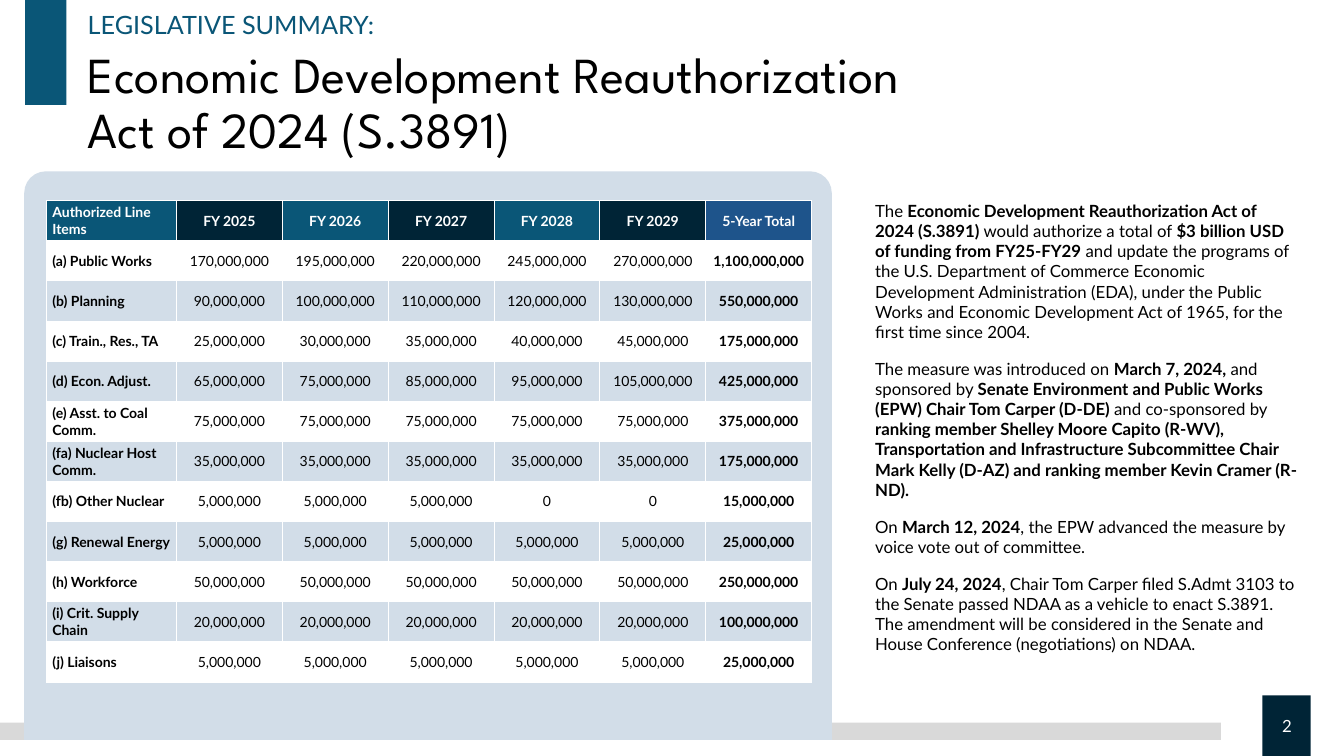
from lxml import etree
from pptx import Presentation
from pptx import util as u
from pptx.dml.color import RGBColor
from pptx.enum import shapes, text
from pptx.oxml import ns

NAVY = RGBColor(0x00, 0x24, 0x36)
TEAL = RGBColor(0x0A, 0x56, 0x77)
BLUE = RGBColor(0x1E, 0x54, 0x8B)
PALE = RGBColor(0xD2, 0xDD, 0xE8)
GRAY = RGBColor(0xD9, 0xD9, 0xD9)
WHITE = RGBColor(0xFF, 0xFF, 0xFF)
BLACK = RGBColor(0x00, 0x00, 0x00)

YEARS = [f"FY {year}" for year in range(2025, 2030)]
MILLIONS = [
    ("(a) Public Works", [170, 195, 220, 245, 270]),
    ("(b) Planning", [90, 100, 110, 120, 130]),
    ("(c) Train., Res., TA", [25, 30, 35, 40, 45]),
    ("(d) Econ. Adjust.", [65, 75, 85, 95, 105]),
    ("(e) Asst. to Coal Comm.", [75] * 5),
    ("(fa) Nuclear Host Comm.", [35] * 5),
    ("(fb) Other Nuclear", [5, 5, 5, 0, 0]),
    ("(g) Renewal Energy", [5] * 5),
    ("(h) Workforce", [50] * 5),
    ("(i) Crit. Supply Chain", [20] * 5),
    ("(j) Liaisons", [5] * 5),
]
STORY = [
    "The *Economic Development Reauthorization Act of 2024 (S.3891)* would authorize "
    "a total of *$3 billion USD of funding from FY25-FY29 *and update the programs of "
    "the U.S. Department of Commerce Economic Development Administration (EDA), under "
    "the Public Works and Economic Development Act of 1965, for the first time since 2004.",
    "The measure was introduced on *March 7, 2024, *and sponsored by *Senate Environment "
    "and Public Works (EPW) Chair Tom Carper (D-DE) *and co-sponsored by *ranking member "
    "Shelley Moore Capito (R-WV), Transportation and Infrastructure Subcommittee Chair "
    "Mark Kelly (D-AZ) and ranking member Kevin Cramer (R-ND).",
    "On *March 12, 2024*, the EPW advanced the measure by voice vote out of committee.",
    "On *July 24, 2024*, Chair Tom Carper filed S.Admt 3103 to the Senate passed NDAA as "
    "a vehicle to enact S.3891. The amendment will be considered in the Senate and House "
    "Conference (negotiations) on NDAA.",
]


class Deck:
    face = "Lato"
    head = "League Spartan"

    def __init__(self):
        self.prs = Presentation()
        self.prs.slide_width = u.Inches(13.33)
        self.prs.slide_height = u.Inches(7.5)
        self.slide = self.prs.slides.add_slide(self.prs.slide_layouts[5])

    def ink(self, run, size, color, bold=False, face=None):
        run.font.name = face or self.face
        run.font.size = u.Pt(size)
        run.font.color.rgb = color
        run.font.bold = bold

    def frame(self, box, wrap=True):
        frame = box.text_frame
        frame.margin_left = frame.margin_right = 0
        frame.margin_top = frame.margin_bottom = 0
        frame.word_wrap = wrap
        frame.vertical_anchor = text.MSO_ANCHOR.TOP
        return frame

    def block(self, place, color, kind=shapes.MSO_SHAPE.RECTANGLE):
        shape = self.slide.shapes.add_shape(kind, *map(u.Inches, place))
        shape.shadow.inherit = False
        shape.fill.solid()
        shape.fill.fore_color.rgb = color
        shape.line.fill.background()
        return shape

    def title(self, place, words):
        box = self.slide.shapes.title
        box.left, box.top, box.width, box.height = map(u.Inches, place)
        frame = self.frame(box)
        frame.text = words
        para = frame.paragraphs[0]
        para.alignment = text.PP_ALIGN.LEFT
        para.line_spacing = 0.9
        for run in para.runs:
            self.ink(run, 36, BLACK, face=self.head)

    def label(self, place, words, size, color, wrap=True):
        box = self.slide.shapes.add_textbox(*map(u.Inches, place))
        frame = self.frame(box, wrap)
        frame.text = words
        self.ink(frame.paragraphs[0].runs[0], size, color)
        return frame

    def prose(self, place, paras):
        box = self.slide.shapes.add_textbox(*map(u.Inches, place))
        frame = self.frame(box)
        for i, words in enumerate(paras):
            para = frame.add_paragraph() if i else frame.paragraphs[0]
            para.space_after = u.Pt(12)
            for j, part in enumerate(words.split("*")):
                if part:
                    run = para.add_run()
                    run.text = part
                    self.ink(run, 12, BLACK, bold=j % 2 == 1)

    def edge(self, cell):
        props = cell._tc.get_or_add_tcPr()
        for i, side in enumerate(("lnL", "lnR", "lnT", "lnB")):
            line = etree.Element(ns.qn(f"a:{side}"), w=str(u.Pt(0.75)))
            fill = etree.SubElement(line, ns.qn("a:solidFill"))
            etree.SubElement(fill, ns.qn("a:srgbClr"), val=str(WHITE))
            props.insert(i, line)

    def cell(self, cell, words, color, bold, back, center):
        cell.margin_left = cell.margin_right = u.Inches(0.06)
        cell.margin_top = cell.margin_bottom = u.Inches(0.03)
        cell.vertical_anchor = text.MSO_ANCHOR.MIDDLE
        if back is None:
            cell.fill.background()
        else:
            cell.fill.solid()
            cell.fill.fore_color.rgb = back
        cell.text_frame.text = words
        para = cell.text_frame.paragraphs[0]
        para.alignment = text.PP_ALIGN.CENTER if center else text.PP_ALIGN.LEFT
        self.ink(para.runs[0], 10, color, bold)
        self.edge(cell)

    def table(self, place, rows, widths):
        last = len(widths) - 1
        grid = self.slide.shapes.add_table(
            len(rows), len(widths), *map(u.Inches, place)).table
        for col, width in zip(grid.columns, widths):
            col.width = u.Inches(width)
        for r, row in enumerate(rows):
            for c, words in enumerate(row):
                if r == 0:
                    back = BLUE if c == last else (TEAL, NAVY)[c % 2]
                else:
                    back = WHITE if r % 2 else None
                self.cell(grid.cell(r, c), words, BLACK if r else WHITE,
                          r == 0 or c in (0, last), back, c > 0)


def main():
    deck = Deck()
    deck.block((12.52, 6.9, 0.48, 0.6), NAVY)
    deck.block((0.25, 0, 0.41, 1.04), TEAL)
    deck.block((0, 7.17, 12.11, 0.17), GRAY)
    panel = deck.block((0.24, 1.7, 8.01, 5.64), PALE,
                       shapes.MSO_SHAPE.ROUND_2_SAME_RECTANGLE)
    panel.adjustments[0] = 0.038
    deck.title((0.87, 0.5, 10.99, 1.09),
               "Economic Development Reauthorization \vAct of 2024 (S.3891)")
    page = deck.label((12.66, 7.1, 0.21, 0.2), "2", 12, WHITE, wrap=False)
    page.vertical_anchor = text.MSO_ANCHOR.MIDDLE
    page.paragraphs[0].alignment = text.PP_ALIGN.CENTER
    deck.label((0.87, 0.09, 3.64, 0.3), "LEGISLATIVE SUMMARY:", 18, TEAL)
    deck.prose((8.68, 1.99, 4.19, 4.71), STORY)
    rows = [["Authorized Line Items", *YEARS, "5-Year Total"]]
    for name, sums in MILLIONS:
        rows.append([name, *(f"{n * 1000000:,}" for n in [*sums, sum(sums)])])
    deck.table((0.46, 1.99, 7.56, 4.78), rows, [1.29] + [1.05] * 6)
    deck.prs.save("out.pptx")


if __name__ == "__main__":
    main()
